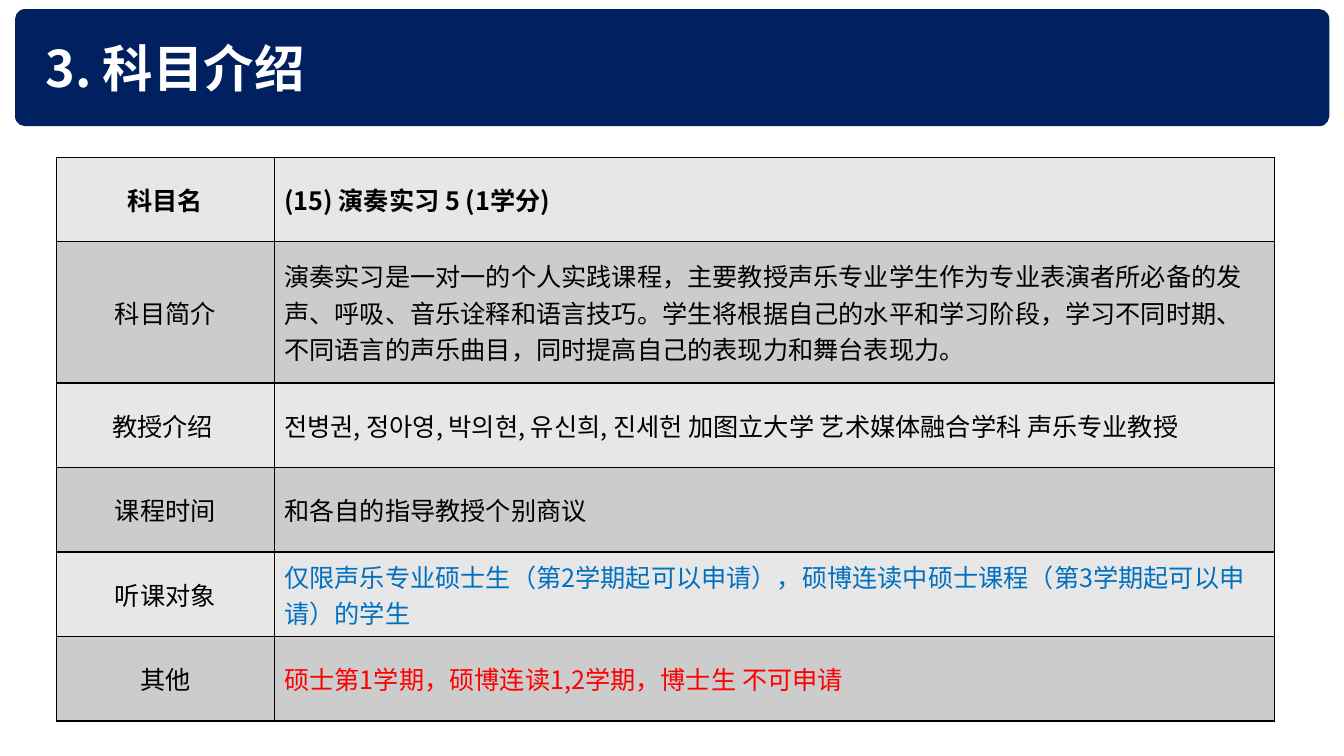
from lxml.etree import SubElement
from pptx import Presentation
from pptx.dml.color import RGBColor
from pptx.enum.shapes import MSO_SHAPE
from pptx.enum.text import MSO_ANCHOR, PP_ALIGN
from pptx.oxml.ns import qn
from pptx.util import Cm, Pt

FONT = "Noto Sans CJK KR"
NAVY, WHITE, BLACK, BLUE, RED = "002060", "FFFFFF", "000000", "0070C0", "FF0000"
ROW_FILLS = ("E7E7E7", "CCCCCC")
COLUMN_WIDTHS = (5.49, 25.2)
ROW_HEIGHT, INTRODUCTION_HEIGHT = 2.13, 3.56
COURSE_ROWS = [
    # label, content, content colour
    ("科目名", "(15) 演奏实习 5 (1学分)", BLACK),
    ("科目简介", "演奏实习是一对一的个人实践课程，主要教授声乐专业学生作为专业表演者所必备的发声、呼吸、"
     "音乐诠释和语言技巧。学生将根据自己的水平和学习阶段，学习不同时期、不同语言的声乐曲目，"
     "同时提高自己的表现力和舞台表现力。", BLACK),
    ("教授介绍 ", "전병권, 정아영, 박의현, 유신희, 진세헌 加图立大学 艺术媒体融合学科 声乐专业教授", BLACK),
    ("课程时间", "和各自的指导教授个别商议", BLACK),
    ("听课对象", "仅限声乐专业硕士生（第2学期起可以申请），硕博连读中硕士课程（第3学期起可以申请）的学生", BLUE),
    ("其他", "硕士第1学期，硕博连读1,2学期，博士生 不可申请", RED),
]


def rgb(value):
    return RGBColor.from_string(value)


def set_attributes(target, values):
    for name, value in values.items():
        setattr(target, name, value)


def write_text(text_frame, text, size, color, bold=False, alignment=PP_ALIGN.LEFT):
    paragraph = text_frame.paragraphs[0]
    paragraph.alignment = alignment
    run = paragraph.add_run()
    run.text = text
    set_attributes(run.font, {"name": FONT, "size": Pt(size), "bold": bold})
    run.font.color.rgb = rgb(color)
    SubElement(run.font._element, qn("a:ea"), typeface=FONT)


def add_banner(slide):
    """Add the navy banner behind the title."""
    banner = slide.shapes.add_shape(
        MSO_SHAPE.ROUNDED_RECTANGLE, Cm(0.38), Cm(0.23), Cm(33.12), Cm(2.95))
    banner.adjustments[0] = 0.085
    banner.shadow.inherit = False
    banner.fill.solid()
    banner.fill.fore_color.rgb = rgb(NAVY)
    banner.line.fill.background()
    slide.shapes._spTree.insert(2, banner._element)


def format_title(slide, text):
    title = slide.shapes.title
    set_attributes(title, {"left": Cm(0.89), "top": Cm(0.79),
                           "width": Cm(29.79), "height": Cm(1.8)})
    set_attributes(title.text_frame, {"word_wrap": True,
                                      "vertical_anchor": MSO_ANCHOR.MIDDLE})
    write_text(title.text_frame, text, 36, WHITE, bold=True)


def add_borders(cell, color, width):
    properties = cell._tc.get_or_add_tcPr()
    for position, side in enumerate(("a:lnL", "a:lnR", "a:lnT", "a:lnB")):
        line = properties.makeelement(qn(side), {"w": str(Pt(width))})
        fill = SubElement(line, qn("a:solidFill"))
        SubElement(fill, qn("a:srgbClr"), val=color)
        properties.insert(position, line)


def add_course_table(slide):
    heights = [ROW_HEIGHT] * len(COURSE_ROWS)
    heights[1] = INTRODUCTION_HEIGHT
    table = slide.shapes.add_table(
        len(heights), len(COLUMN_WIDTHS), Cm(1.42), Cm(3.96),
        Cm(sum(COLUMN_WIDTHS)), Cm(sum(heights))).table
    for column, width in zip(table.columns, COLUMN_WIDTHS):
        column.width = Cm(width)
    for index, (label, content, color) in enumerate(COURSE_ROWS):
        row = table.rows[index]
        row.height = Cm(heights[index])
        label_cell, content_cell = row.cells
        is_header = index == 0
        write_text(label_cell.text_frame, label, 18, BLACK, is_header, PP_ALIGN.CENTER)
        write_text(content_cell.text_frame, content, 18, color, is_header)
        for cell in (label_cell, content_cell):
            cell.vertical_anchor = MSO_ANCHOR.MIDDLE
            cell.fill.solid()
            cell.fill.fore_color.rgb = rgb(ROW_FILLS[index % 2])
            add_borders(cell, BLACK, 1)


def main():
    presentation = Presentation()
    set_attributes(presentation, {"slide_width": Cm(33.87), "slide_height": Cm(19.05)})
    slide = presentation.slides.add_slide(presentation.slide_layouts[5])
    add_banner(slide)
    format_title(slide, "3. 科目介绍")
    add_course_table(slide)
    presentation.save("out.pptx")


if __name__ == "__main__":
    main()
